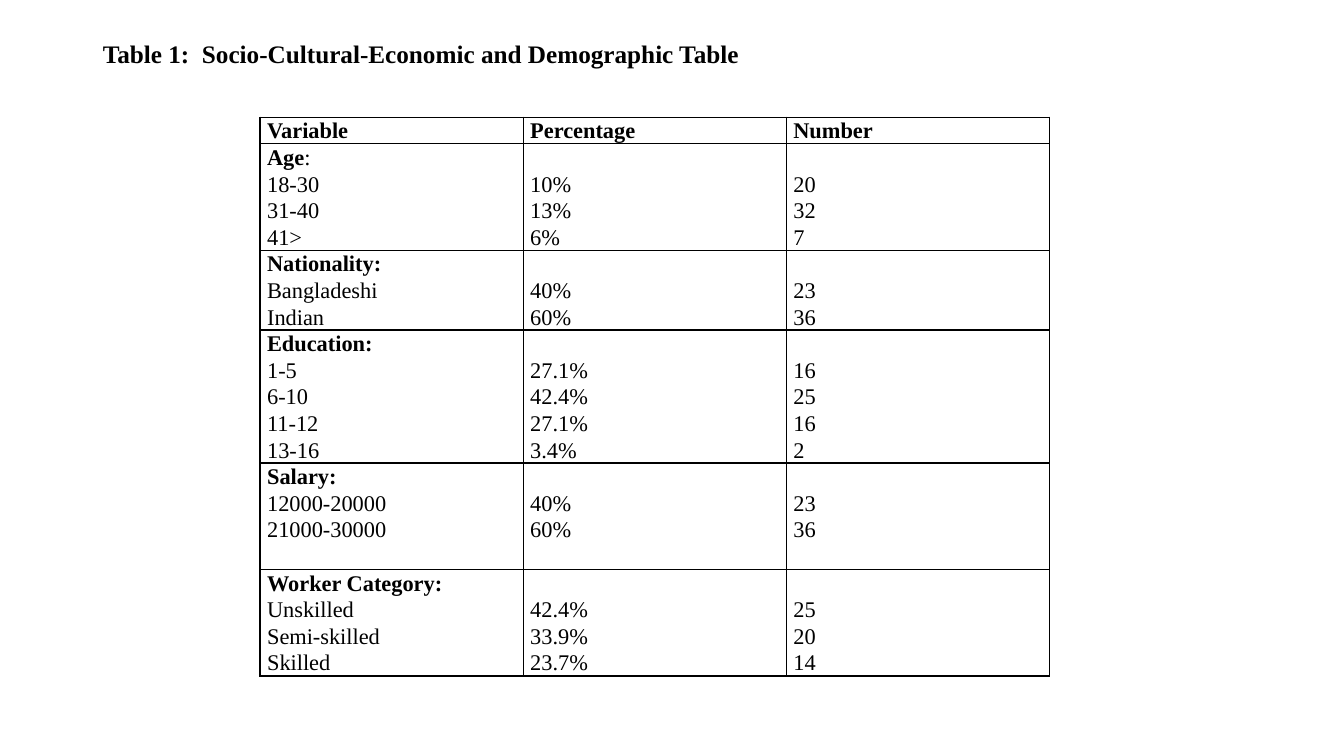
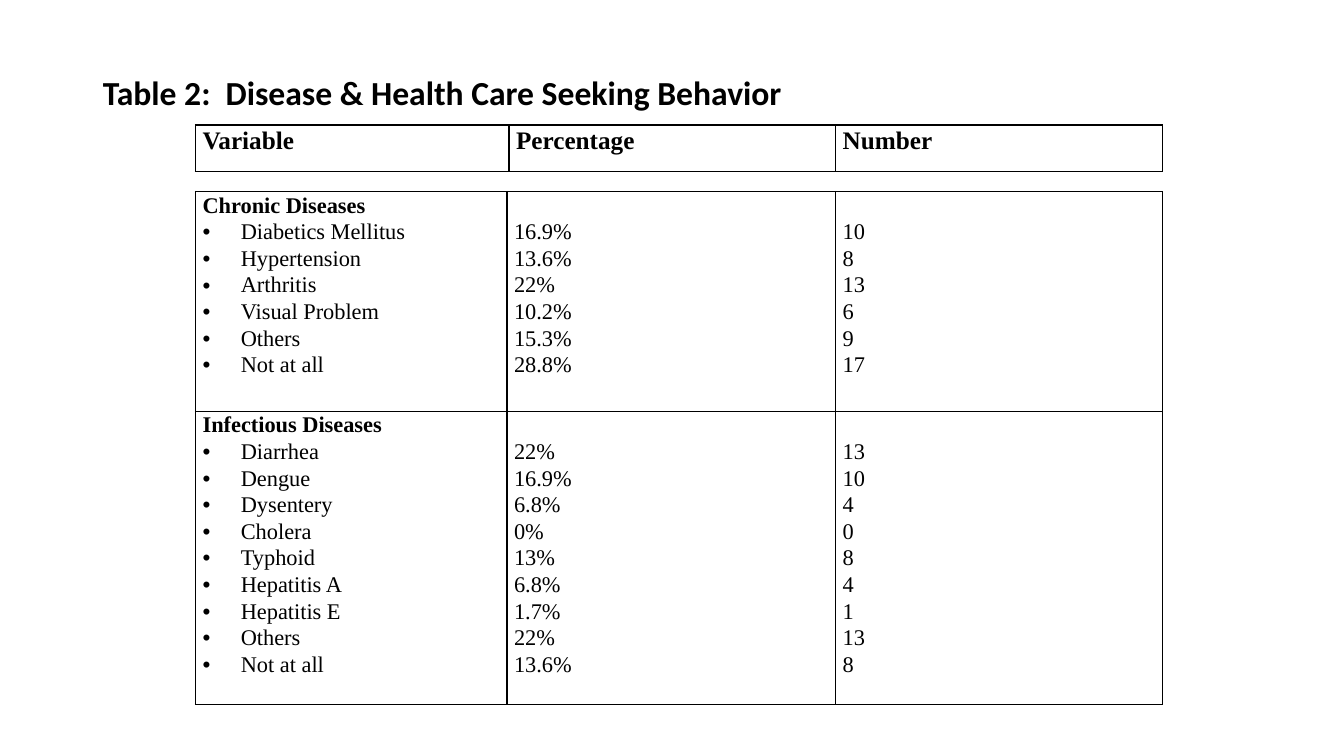
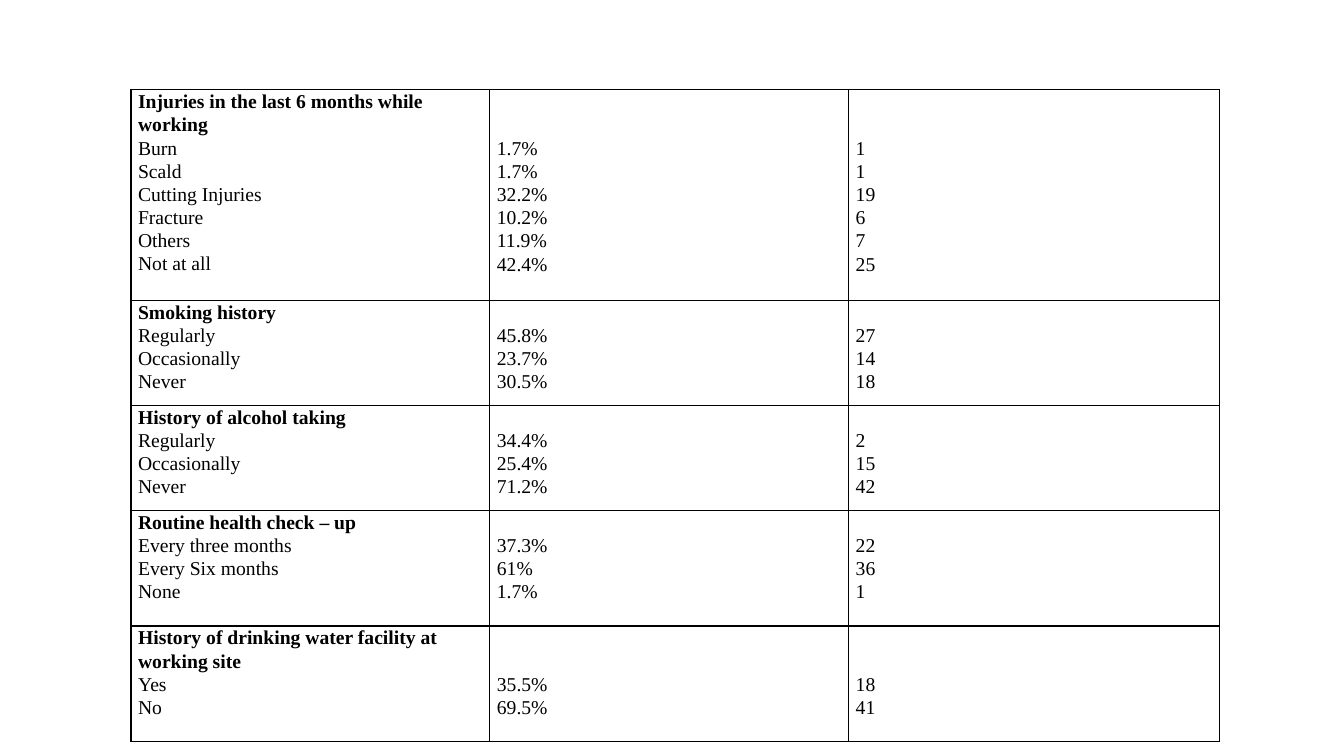
"""Builds three slides of survey tables on workers' background and health."""
from lxml.etree import SubElement
from pptx import Presentation
from pptx.dml.color import RGBColor
from pptx.enum.text import MSO_ANCHOR, PP_ALIGN
from pptx.oxml.ns import qn
from pptx.util import Inches, Pt

deck = Presentation()
deck.slide_width, deck.slide_height = Inches(13.33), Inches(7.5)
COLUMN, ROW = deck.slide_width / 100, deck.slide_height / 100
INK = "000000"
SERIF, SANS = "Times New Roman", "Calibri"
LINE_PER_POINT = 0.22
HEADER = (["Variable", "Percentage", "Number"], 0, [])


def style(span, text, font, size, bold):
    """Set the text and the font of one run."""
    span.text = text
    span.font.name, span.font.size, span.font.bold = font, Pt(size), bold
    span.font.color.rgb = RGBColor.from_string(INK)


def add_grid(page, left, top, widths, heights, size, sections, bulleted=False):
    """Add a ruled table with one row for each section of the survey."""
    frame = page.shapes.add_table(
        len(heights), len(widths), int(left * COLUMN), int(top * ROW),
        int(sum(widths) * COLUMN), int(sum(heights) * ROW))
    table = frame.table
    table.first_row = table.horz_banding = False
    for column, width in zip(table.columns, widths):
        column.width = int(width * COLUMN)
    for row, height, (heads, head_lines, entries) in zip(table.rows, heights, sections):
        row.height = int(height * ROW)
        for position, cell in enumerate(row.cells):
            head = heads[position:position + 1]
            cell.margin_left = cell.margin_right = Inches(0.07)
            cell.margin_bottom = 0
            cell.margin_top = 0 if head else int(head_lines * size * LINE_PER_POINT * ROW)
            for side in ("lnL", "lnR", "lnT", "lnB"):
                border = SubElement(cell._tc.get_or_add_tcPr(), qn(f"a:{side}"), w=str(Pt(1)))
                SubElement(SubElement(border, qn("a:solidFill")), qn("a:srgbClr"), val=INK)
            cell.fill.background()
            lines = head + [entry[position] for entry in entries]
            for number, line in enumerate(lines):
                body = cell.text_frame
                para = body.add_paragraph() if number else body.paragraphs[0]
                para.line_spacing = 1.07
                is_head = number < len(head)
                bold_part, _, plain_part = line.partition("|")
                style(para.add_run(), bold_part, SERIF, size, is_head)
                if plain_part:
                    style(para.add_run(), plain_part, SERIF, size, False)
                if bulleted and position == 0 and not is_head:
                    settings = para._p.get_or_add_pPr()
                    settings.set("marL", str(Inches(0.38)))
                    settings.set("indent", str(-Inches(0.38)))
                    SubElement(settings, qn("a:buFont"), typeface="Arial")
                    SubElement(settings, qn("a:buChar"), char="•")


background = [
    HEADER,
    (["Age|:"], 1, [("18-30", "10%", "20"), ("31-40", "13%", "32"), ("41>", "6%", "7")]),
    (["Nationality:"], 1, [("Bangladeshi", "40%", "23"), ("Indian", "60%", "36")]),
    (["Education:"], 1, [("1-5", "27.1%", "16"), ("6-10", "42.4%", "25"),
                         ("11-12", "27.1%", "16"), ("13-16", "3.4%", "2")]),
    (["Salary:"], 1, [("12000-20000", "40%", "23"), ("21000-30000", "60%", "36")]),
    (["Worker Category:"], 1, [("Unskilled", "42.4%", "25"), ("Semi-skilled", "33.9%", "20"),
                               ("Skilled", "23.7%", "14")]),
]
diseases = [
    (["Chronic Diseases"], 1, [
        ("Diabetics Mellitus", "16.9%", "10"), ("Hypertension", "13.6%", "8"),
        ("Arthritis", "22%", "13"), ("Visual Problem", "10.2%", "6"),
        ("Others", "15.3%", "9"), ("Not at all", "28.8%", "17")]),
    (["Infectious Diseases"], 1, [
        ("Diarrhea", "22%", "13"), ("Dengue", "16.9%", "10"), ("Dysentery", "6.8%", "4"),
        ("Cholera", "0%", "0"), ("Typhoid", "13%", "8"), ("Hepatitis A", "6.8%", "4"),
        ("Hepatitis E", "1.7%", "1"), ("Others", "22%", "13"), ("Not at all", "13.6%", "8")]),
]
habits = [
    (["Injuries in the last 6 months while working"], 2, [
        ("Burn", "1.7%", "1"), ("Scald", "1.7%", "1"), ("Cutting Injuries", "32.2%", "19"),
        ("Fracture", "10.2%", "6"), ("Others", "11.9%", "7"), ("Not at all", "42.4%", "25")]),
    (["Smoking history"], 1, [
        ("Regularly", "45.8%", "27"), ("Occasionally", "23.7%", "14"), ("Never", "30.5%", "18")]),
    (["History of alcohol taking"], 1, [
        ("Regularly", "34.4%", "2"), ("Occasionally", "25.4%", "15"), ("Never", "71.2%", "42")]),
    (["Routine health check – up"], 1, [
        ("Every three months", "37.3%", "22"), ("Every Six months", "61%", "36"),
        ("None", "1.7%", "1")]),
    (["History of drinking water facility at working site"], 2, [
        ("Yes", "35.5%", "18"), ("No", "69.5%", "41")]),
]

titles = [
    ("Table 1:  Socio-Cultural-Economic and Demographic Table", SERIF, 18, 2.4, 0.76),
    ("Table 2:  Disease & Health Care Seeking Behavior", SANS, 24, 4.53, 0.3),
]
titled_pages = []
for text, font, size, top, bottom_margin in titles:
    page = deck.slides.add_slide(deck.slide_layouts[5])
    box = page.shapes.title
    box.left, box.top = int(6.9 * COLUMN), int(top * ROW)
    box.width, box.height = int(86.25 * COLUMN), int(19.33 * ROW)
    box.text_frame.vertical_anchor = MSO_ANCHOR.MIDDLE
    box.text_frame.margin_bottom = Inches(bottom_margin)
    para = box.text_frame.paragraphs[0]
    para.alignment, para.line_spacing = PP_ALIGN.LEFT, 0.9
    style(para.add_run(), text, font, size, True)
    titled_pages.append(page)

background_page, disease_page = titled_pages
habit_page = deck.slides.add_slide(deck.slide_layouts[6])

line_counts = [1, 4, 3, 5, 4, 4]
add_grid(background_page, 19.35, 15.5, [19.58] * 3,
         [count * 16 * LINE_PER_POINT for count in line_counts], 16, background)
add_grid(disease_page, 14.55, 16.53, [23.33, 24.3, 24.3], [6.13], 18, [HEADER])
add_grid(disease_page, 14.55, 25.33, [23.18, 24.45, 24.3], [29.07, 38.8], 16, diseases, True)
add_grid(habit_page, 9.75, 11.87, [26.7, 26.7, 27.6],
         [27.87, 13.87, 13.87, 15.33, 15.33], 14, habits)

deck.save("out.pptx")
